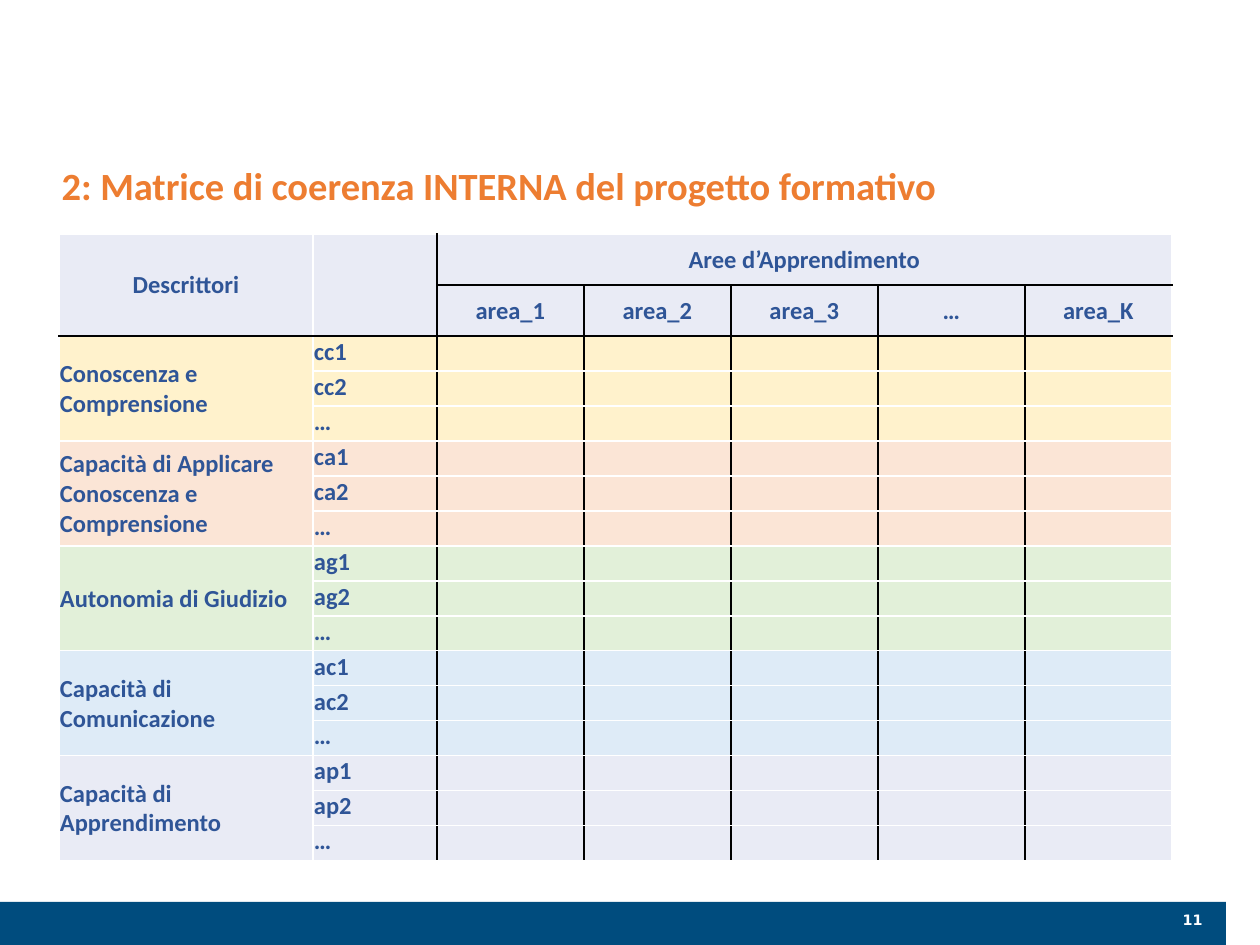
from lxml.etree import SubElement
from pptx import Presentation
from pptx.dml.color import RGBColor
from pptx.enum.shapes import MSO_SHAPE
from pptx.enum.text import MSO_ANCHOR as ANCHOR, MSO_AUTO_SIZE as AUTO, PP_ALIGN as ALIGN
from pptx.oxml.ns import qn
from pptx.util import Emu, Pt

HEADER_FILL = "E9EBF5"
TABLE_TEXT = "2F5597"
AREAS = ["area_1", "area_2", "area_3", "…", "area_K"]
GROUPS = [
    ("Conoscenza e Comprensione", "cc", "FFF2CC"),
    ("Capacità di Applicare Conoscenza e Comprensione", "ca", "FBE5D6"),
    ("Autonomia di Giudizio", "ag", "E2F0D9"),
    ("Capacità di Comunicazione", "ac", "DEEBF7"),
    ("Capacità di Apprendimento", "ap", HEADER_FILL),
]
HEADER_ROWS, GROUP_ROWS, LABEL_COLS = 2, 3, 2
LAST_COL = LABEL_COLS + len(AREAS)
ROW_COUNT = HEADER_ROWS + GROUP_ROWS * len(GROUPS)


def px(*values):
    return [Emu(round(v * 914400 / 126)) for v in values]


def rgb(value):
    return RGBColor.from_string(value)


def format_text(tf, size, color, font="Calibri", align=ALIGN.LEFT):
    p = tf.paragraphs[0]
    p.alignment = align
    for r in p.runs:
        r.font.size = Pt(size)
        r.font.name = font
        r.font.bold = True
        r.font.color.rgb = rgb(color)


def add_title(s, box):
    title = s.shapes.title
    title.left, title.top, title.width, title.height = px(*box)
    tf = title.text_frame
    tf.text = "2: Matrice di coerenza INTERNA del progetto formativo"
    tf.word_wrap = True
    tf.auto_size = AUTO.NONE
    tf.vertical_anchor = ANCHOR.TOP
    format_text(tf, 22, "ED7D31")


def add_footer(s, box):
    x, y, w, h = box
    bar = s.shapes.add_shape(MSO_SHAPE.RECTANGLE, *px(x, y, w, h))
    bar.shadow.inherit = False
    bar.fill.solid()
    bar.fill.fore_color.rgb = rgb("004C7E")
    bar.line.fill.background()
    number = s.shapes.add_textbox(*px(x + w - 151, y + 3, 140, 30))
    tf = number.text_frame
    tf.word_wrap = True
    tf.text = "11"
    format_text(tf, 8.2, "FFFFFF", "DejaVu Sans", ALIGN.RIGHT)


def vertical_edge(row, col):
    last_black = LABEL_COLS if row == 0 else LAST_COL - 1
    return "000000" if LABEL_COLS <= col <= last_black else "FFFFFF"


def horizontal_edge(row, col):
    black = row == HEADER_ROWS or row == 1 and col >= LABEL_COLS
    return "000000" if black else "FFFFFF"


def set_borders(cell, row, col):
    tc_pr = cell._tc.get_or_add_tcPr()
    edges = {
        "a:lnL": vertical_edge(row, col),
        "a:lnR": vertical_edge(row, col + cell.span_width),
        "a:lnT": horizontal_edge(row, col),
        "a:lnB": horizontal_edge(row + cell.span_height, col),
    }
    for tag, color in edges.items():
        line = SubElement(tc_pr, qn(tag), w=str(Pt(1)))
        fill = SubElement(line, qn("a:solidFill"))
        SubElement(fill, qn("a:srgbClr"), val=color)


def format_cell(cell, row, col):
    set_borders(cell, row, col)
    header = row < HEADER_ROWS
    group = (row - HEADER_ROWS) // GROUP_ROWS
    cell.fill.solid()
    cell.fill.fore_color.rgb = rgb(HEADER_FILL if header else GROUPS[group][2])
    cell.margin_left, cell.margin_right, cell.margin_top, cell.margin_bottom = px(1, 1, 1, 0)
    cell.vertical_anchor = ANCHOR.MIDDLE if header or col == 0 else ANCHOR.TOP
    tf = cell.text_frame
    format_text(tf, 14, TABLE_TEXT, align=ALIGN.CENTER if header else ALIGN.LEFT)
    if not cell.text:
        SubElement(tf.paragraphs[0]._p, qn("a:endParaRPr"), sz="1400")


def add_matrix(s, box):
    table = s.shapes.add_table(ROW_COUNT, LAST_COL, *px(*box)).table
    table.first_row = table.horz_banding = False
    for column, width in zip(table.columns, px(254, 124, *[147] * len(AREAS))):
        column.width = width
    heights = [51] * HEADER_ROWS + [35] * (ROW_COUNT - HEADER_ROWS)
    for line, height in zip(table.rows, px(*heights)):
        line.height = height

    for col in range(LABEL_COLS):
        table.cell(0, col).merge(table.cell(HEADER_ROWS - 1, col))
    table.cell(0, LABEL_COLS).merge(table.cell(0, LAST_COL - 1))
    table.cell(0, 0).text = "Descrittori"
    table.cell(0, LABEL_COLS).text = "Aree d’Apprendimento"
    for col, area in enumerate(AREAS, LABEL_COLS):
        table.cell(1, col).text = area

    for i, (name, code, _) in enumerate(GROUPS):
        top = HEADER_ROWS + i * GROUP_ROWS
        table.cell(top, 0).merge(table.cell(top + GROUP_ROWS - 1, 0))
        table.cell(top, 0).text = name
        for row, label in enumerate([f"{code}1", f"{code}2", "…"], top):
            table.cell(row, 1).text = label

    for row in range(ROW_COUNT):
        for col in range(LAST_COL):
            format_cell(table.cell(row, col), row, col)


def main():
    prs = Presentation()
    prs.slide_width, prs.slide_height = px(1260, 945)
    s = prs.slides.add_slide(prs.slide_layouts[5])
    add_footer(s, (0, 902, 1226, 43))
    add_title(s, (49, 156, 1084, 59))
    add_matrix(s, (59, 234, 1113, 627))
    prs.save("out.pptx")


if __name__ == "__main__":
    main()
